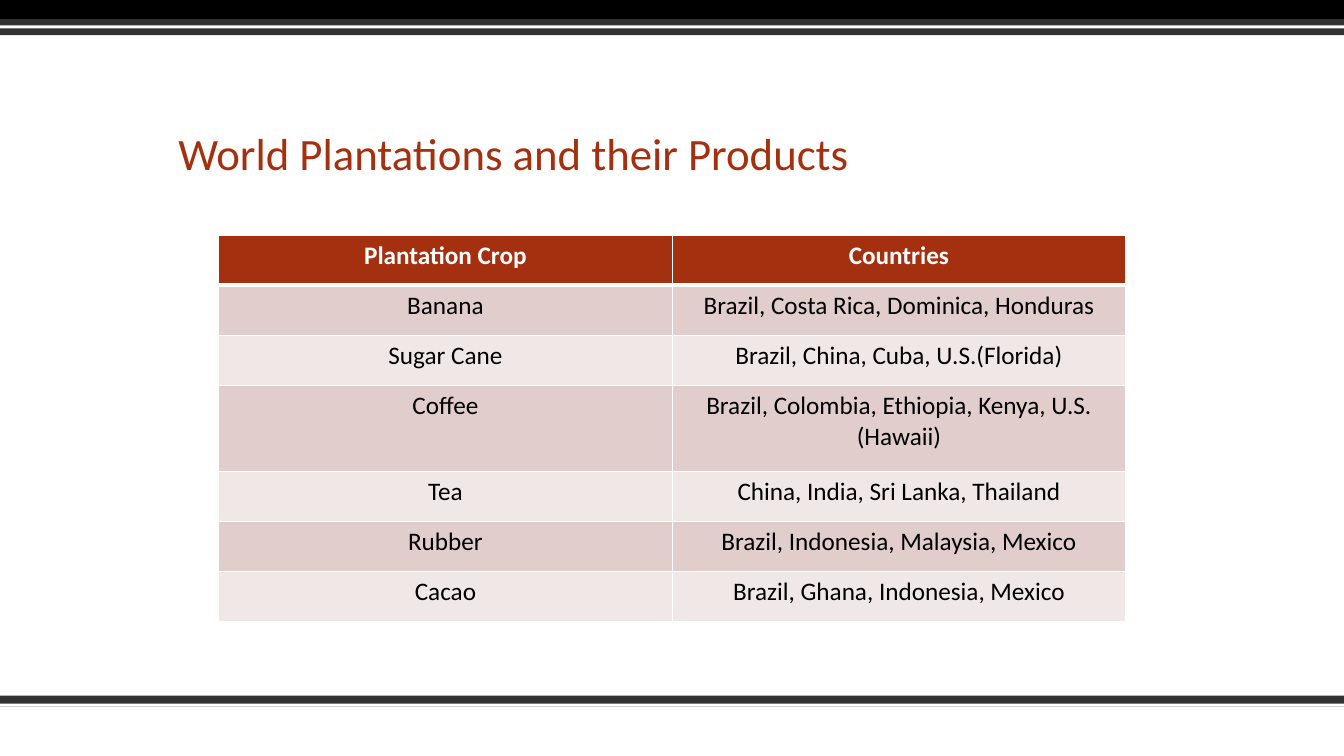
from dataclasses import dataclass

from lxml import etree
from pptx import Presentation
from pptx.dml.color import RGBColor
from pptx.enum import shapes, text
from pptx.oxml import ns
from pptx.util import Cm, Pt


@dataclass(frozen=True)
class Theme:
    font: str = "Calibri"
    title_size: int = 32
    table_size: int = 18
    accent: str = "A5300F"
    dark: str = "323232"
    black: str = "000000"
    white: str = "FFFFFF"
    bands: tuple = ("E1CDCC", "F0E8E7")
    rule: int = 1
    header_rule: int = 3


THEME = Theme()
SLIDE_W, SLIDE_H = Cm(33.87), Cm(19.05)

# top, height, colour
STRIPES = [
    (17.53, 0.28, THEME.dark),
    (17.73, 0.08, THEME.white),
    (0, 0.48, THEME.black),
    (0.48, 0.41, THEME.dark),
    (0.64, 0.08, THEME.white),
]

CROPS = [
    ("Plantation Crop", "Countries"),
    ("Banana", "Brazil, Costa Rica, Dominica, Honduras"),
    ("Sugar Cane", "Brazil, China, Cuba, U.S.(Florida)"),
    ("Coffee", "Brazil, Colombia, Ethiopia, Kenya, U.S.(Hawaii)"),
    ("Tea", "China, India, Sri Lanka, Thailand"),
    ("Rubber", "Brazil, Indonesia, Malaysia, Mexico"),
    ("Cacao", "Brazil, Ghana, Indonesia, Mexico"),
]
ROW_H, TALL_ROW_H, COL_W = Cm(1.26), Cm(2.18), Cm(11.43)
TALL_ROW = 3


def format_text(p, size, color, bold=False):
    for r in p.runs:
        r.font.name = THEME.font
        r.font.size = Pt(size)
        r.font.bold = bold
        r.font.color.rgb = RGBColor.from_string(color)


def add_stripe(s, top, height, color):
    sp = s.shapes.add_shape(
        shapes.MSO_SHAPE.RECTANGLE, 0, Cm(top), SLIDE_W, Cm(height))
    sp.shadow.inherit = False
    sp.fill.solid()
    sp.fill.fore_color.rgb = RGBColor.from_string(color)
    sp.line.fill.background()


def set_title(s, title):
    sp = s.shapes.title
    sp.left, sp.top, sp.width, sp.height = Cm(4.24), Cm(1.7), Cm(25.4), Cm(2.97)
    tf = sp.text_frame
    tf.text = title
    tf.word_wrap = True
    tf.vertical_anchor = text.MSO_ANCHOR.BOTTOM
    p = tf.paragraphs[0]
    p.alignment = text.PP_ALIGN.LEFT
    p.line_spacing = 0.9
    format_text(p, THEME.title_size, THEME.accent)


def set_borders(cell, top, bottom):
    """Draw white cell borders; top and bottom widths are in points."""
    tc_pr = cell._tc.get_or_add_tcPr()
    widths = {"L": THEME.rule, "R": THEME.rule, "T": top, "B": bottom}
    for side, width in widths.items():
        ln = etree.SubElement(tc_pr, ns.qn(f"a:ln{side}"), w=str(Pt(width)))
        fill = etree.SubElement(ln, ns.qn("a:solidFill"))
        etree.SubElement(fill, ns.qn("a:srgbClr"), val=THEME.white)


def fill_cell(cell, value, row):
    header = row == 0
    set_borders(
        cell,
        top=THEME.header_rule if row == 1 else THEME.rule,
        bottom=THEME.header_rule if header else THEME.rule,
    )
    cell.fill.solid()
    color = THEME.accent if header else THEME.bands[(row - 1) % 2]
    cell.fill.fore_color.rgb = RGBColor.from_string(color)
    cell.text_frame.text = value
    p = cell.text_frame.paragraphs[0]
    p.alignment = text.PP_ALIGN.CENTER
    format_text(p, THEME.table_size, THEME.white if header else THEME.black, header)


def add_crop_table(s, rows):
    n_cols = len(rows[0])
    height = ROW_H * (len(rows) - 1) + TALL_ROW_H
    table = s.shapes.add_table(
        len(rows), n_cols, Cm(5.51), Cm(5.93), COL_W * n_cols, height).table
    for col in table.columns:
        col.width = COL_W
    for i, values in enumerate(rows):
        table.rows[i].height = TALL_ROW_H if i == TALL_ROW else ROW_H
        for j, value in enumerate(values):
            fill_cell(table.cell(i, j), value, i)


def main():
    prs = Presentation()
    prs.slide_width, prs.slide_height = SLIDE_W, SLIDE_H
    s = prs.slides.add_slide(prs.slide_layouts.get_by_name("Title Only"))
    for stripe in STRIPES:
        add_stripe(s, *stripe)
    set_title(s, "World Plantations and their Products")
    add_crop_table(s, CROPS)
    prs.save("out.pptx")


if __name__ == "__main__":
    main()
